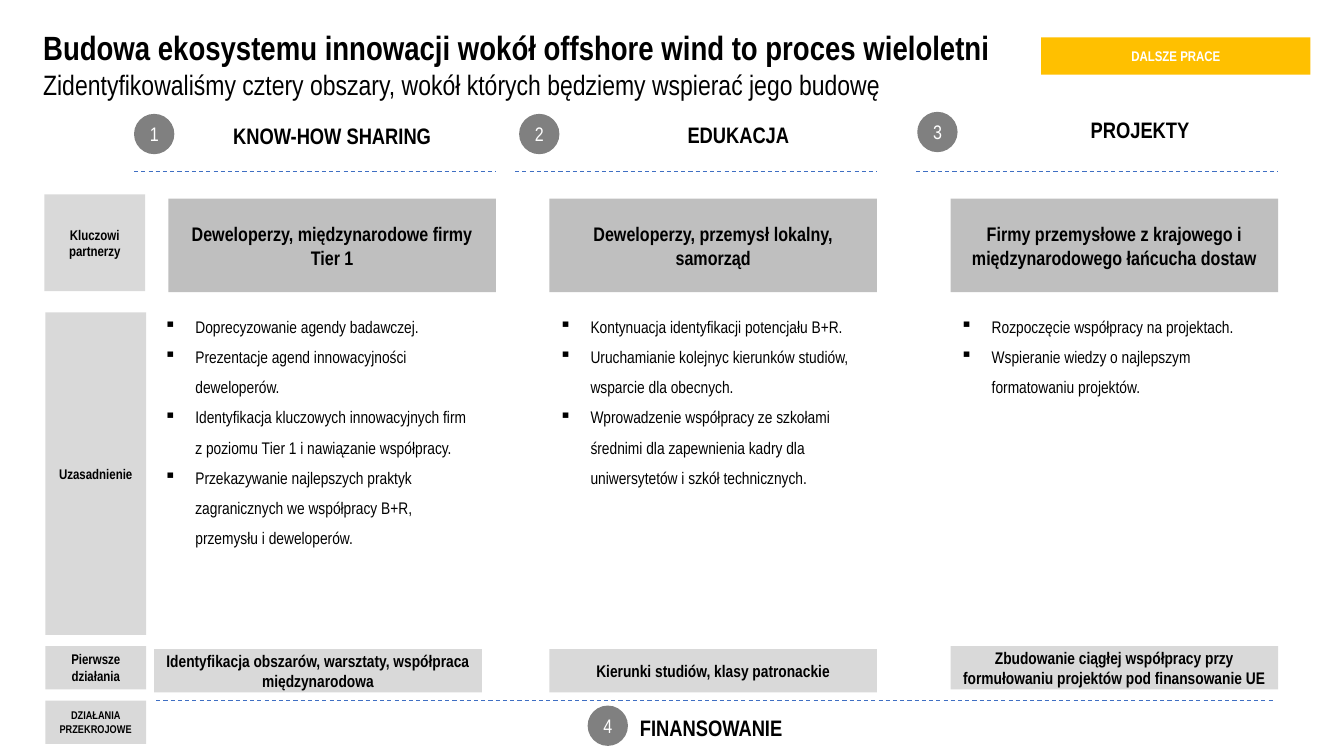
from dataclasses import dataclass

from lxml.etree import SubElement
from pptx import Presentation
from pptx.dml.color import RGBColor
from pptx.enum.dml import MSO_LINE_DASH_STYLE as Dash
from pptx.enum.shapes import MSO_CONNECTOR as Connector, MSO_SHAPE as Preset
from pptx.enum.text import MSO_ANCHOR as Anchor, MSO_AUTO_SIZE as AutoSize, PP_ALIGN as Align
from pptx.oxml.ns import qn
from pptx.util import Emu, Inches, Pt

BLACK = RGBColor(0x00, 0x00, 0x00)
WHITE = RGBColor(0xFF, 0xFF, 0xFF)
LIGHT = RGBColor(0xD9, 0xD9, 0xD9)
MID = RGBColor(0xBF, 0xBF, 0xBF)
DARK = RGBColor(0x80, 0x80, 0x80)
AMBER = RGBColor(0xFF, 0xC0, 0x00)
BLUE = RGBColor(0x3F, 0x6F, 0xC3)

# Grid of square cells: 133.3 columns by 75 rows
CELL = Inches(0.1)
COLUMNS, ROWS = 133.33, 75
AREA_WIDTH, RULE_WIDTH, BADGE_SIZE = 32.5, 35.9, 4
LABEL_WIDTH, STRIP_HEIGHT, HEADING_HEIGHT = 10, 4.3, 3.7


def cells(count: float) -> Emu:
    return Emu(round(count * CELL))


@dataclass(frozen=True)
class Box:
    left: float
    top: float
    width: float
    height: float

    def place(self) -> tuple[Emu, Emu, Emu, Emu]:
        return cells(self.left), cells(self.top), cells(self.width), cells(self.height)


@dataclass(frozen=True)
class Label:
    text: str
    box: Box
    size: int = 10
    fill: RGBColor = LIGHT
    color: RGBColor = BLACK


@dataclass(frozen=True)
class Area:
    number: str
    heading: str
    partners: str
    reasons: tuple[str, ...]
    action: str
    left: float
    badge_left: float
    badge_top: float
    heading_left: float
    heading_top: float
    reasons_left: float
    reasons_height: float
    action_left: float
    action_top: float


AREAS = (
    Area("1", "KNOW-HOW SHARING", "Deweloperzy, międzynarodowe firmy Tier 1",
         ("Doprecyzowanie agendy badawczej.",
          "Prezentacje agend innowacyjności deweloperów.",
          "Identyfikacja kluczowych innowacyjnych firm z poziomu Tier 1 i nawiązanie współpracy.",
          "Przekazywanie najlepszych praktyk zagranicznych we współpracy B+R, "
          "przemysłu i deweloperów."),
         "Identyfikacja obszarów, warsztaty, współpraca międzynarodowa",
         16.7, 13.3, 11.3, 16.7, 11.6, 15.3, 24.9, 15.3, 64.4),
    Area("2", "EDUKACJA", "Deweloperzy, przemysł lokalny, samorząd",
         ("Kontynuacja identyfikacji potencjału B+R.",
          "Uruchamianie kolejnyc kierunków studiów, wsparcie dla obecnych.",
          "Wprowadzenie współpracy ze szkołami średnimi dla zapewnienia kadry "
          "dla uniwersytetów i szkół technicznych."),
         "Kierunki studiów, klasy patronackie",
         54.5, 51.5, 11.3, 59.5, 11.5, 54.5, 18.8, 54.5, 64.4),
    Area("3", "PROJEKTY", "Firmy przemysłowe z krajowego i międzynarodowego łańcucha dostaw",
         ("Rozpoczęcie współpracy na projektach.",
          "Wspieranie wiedzy o najlepszym formatowaniu projektów."),
         "Zbudowanie ciągłej współpracy przy formułowaniu projektów pod finansowanie UE",
         94.3, 91, 11.1, 99.4, 11, 94.3, 9.7, 94.3, 64.1),
)

LABELS = (
    Label("Kluczowi partnerzy", Box(4.4, 19.3, LABEL_WIDTH, 9.6)),
    Label("Uzasadnienie", Box(4.5, 31, LABEL_WIDTH, 32)),
    Label("Pierwsze działania", Box(4.5, 64.1, LABEL_WIDTH, STRIP_HEIGHT)),
    Label("DZIAŁANIA PRZEKROJOWE", Box(4.5, 69.5, LABEL_WIDTH, STRIP_HEIGHT), 8),
    Label("DALSZE PRACE", Box(103.3, 3.7, 26.7, 3.7), 10, AMBER, WHITE),
)


def write(paragraph, text: str, size: int, bold: bool = True, color: RGBColor = BLACK) -> None:
    run = paragraph.add_run()
    run.text = text
    font_format = {"name": "Arial Narrow", "size": Pt(size), "bold": bold}
    for attribute, value in font_format.items():
        setattr(run.font, attribute, value)
    run.font.color.rgb = color


def draw_label(slide, label: Label, preset: Preset = Preset.RECTANGLE, bold: bool = True) -> None:
    panel = slide.shapes.add_shape(preset, *label.box.place())
    panel.shadow.inherit = False
    panel.fill.solid()
    panel.fill.fore_color.rgb = label.fill
    panel.line.fill.background()
    panel.text_frame.word_wrap = True
    panel.text_frame.vertical_anchor = Anchor.MIDDLE
    paragraph = panel.text_frame.paragraphs[0]
    paragraph.alignment = Align.CENTER
    write(paragraph, label.text, label.size, bold, label.color)


def draw_badge(slide, number: str, left: float, top: float) -> None:
    badge = Label(number, Box(left, top, BADGE_SIZE, BADGE_SIZE), 14, DARK, WHITE)
    draw_label(slide, badge, Preset.OVAL, bold=False)


def add_text(slide, box: Box):
    frame = slide.shapes.add_textbox(*box.place()).text_frame
    frame_format = {"word_wrap": True, "auto_size": AutoSize.SHAPE_TO_FIT_TEXT}
    for attribute, value in frame_format.items():
        setattr(frame, attribute, value)
    return frame


def draw_heading(slide, text: str, left: float, top: float, width: float) -> None:
    heading = add_text(slide, Box(left, top, width, HEADING_HEIGHT)).paragraphs[0]
    heading.alignment = Align.CENTER
    write(heading, text, 16)


def draw_reasons(slide, reasons: tuple[str, ...], box: Box) -> None:
    frame = add_text(slide, box)
    for index, reason in enumerate(reasons):
        paragraph = frame.add_paragraph() if index else frame.paragraphs[0]
        paragraph.line_spacing = 1.5
        properties = paragraph._p.get_or_add_pPr()
        properties.set("marL", str(Inches(0.31)))
        properties.set("indent", str(-Inches(0.33)))
        bullet_color = SubElement(properties, qn("a:buClr"))
        SubElement(bullet_color, qn("a:srgbClr"), val=str(BLACK))
        SubElement(properties, qn("a:buChar"), char="▪")
        write(paragraph, reason, 12, bold=False)


def draw_rule(slide, left: float, right: float, top: float) -> None:
    rule = slide.shapes.add_connector(
        Connector.STRAIGHT, cells(left), cells(top), cells(right), cells(top))
    rule.line.color.rgb = BLUE
    rule.line.width = Pt(0.75)
    rule.line.dash_style = Dash.DASH
    SubElement(rule._element.spPr, qn("a:effectLst"))


def draw_area(slide, area: Area) -> None:
    right = area.left + AREA_WIDTH
    draw_label(slide, Label(area.partners, Box(area.left, 19.7, AREA_WIDTH, 9.3), 14, MID))
    draw_badge(slide, area.number, area.badge_left, area.badge_top)
    draw_rule(slide, right - RULE_WIDTH, right, 17)
    draw_heading(slide, area.heading, area.heading_left, area.heading_top,
                 right - area.heading_left)
    draw_reasons(slide, area.reasons,
                 Box(area.reasons_left, 29.9, AREA_WIDTH, area.reasons_height))
    draw_label(slide, Label(
        area.action, Box(area.action_left, area.action_top, AREA_WIDTH, STRIP_HEIGHT), 12))


def main() -> None:
    deck = Presentation()
    deck.slide_width, deck.slide_height = cells(COLUMNS), cells(ROWS)
    slide = deck.slides.add_slide(deck.slide_layouts[6])

    # Title and subtitle
    title = add_text(slide, Box(3.3, 2.2, 123.4, 8.4))
    write(title.paragraphs[0], "Budowa ekosystemu innowacji wokół offshore wind "
                               "to proces wieloletni", 24)
    write(title.add_paragraph(), "Zidentyfikowaliśmy cztery obszary, wokół których "
                                 "będziemy wspierać jego budowę", 20, bold=False)

    # Three areas, row labels and status tag
    for area in AREAS:
        draw_area(slide, area)
    for label in LABELS:
        draw_label(slide, label)

    # Cross-cutting fourth area
    draw_heading(slide, "FINANSOWANIE", 54.3, 70.4, AREA_WIDTH)
    draw_rule(slide, 15.5, 126.5, 69.5)
    draw_badge(slide, "4", 58.3, 70)

    deck.save("out.pptx")


if __name__ == "__main__":
    main()
